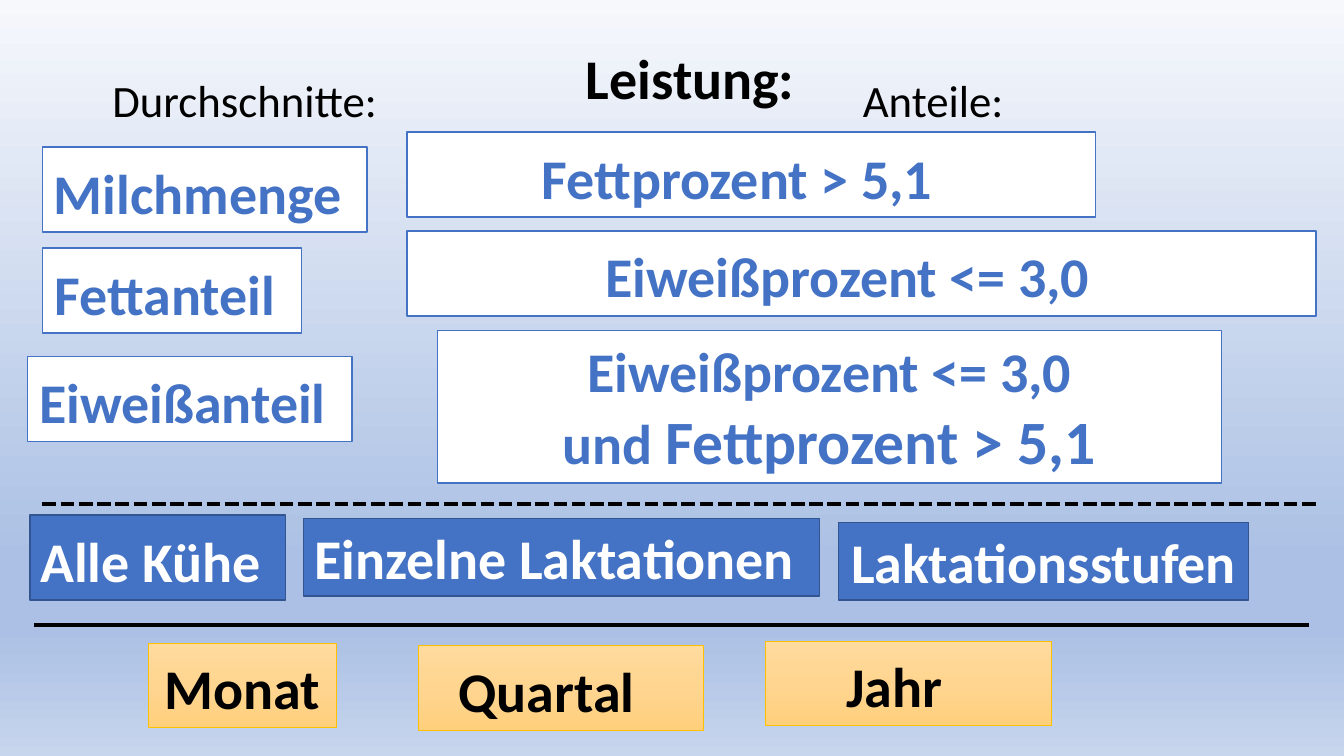
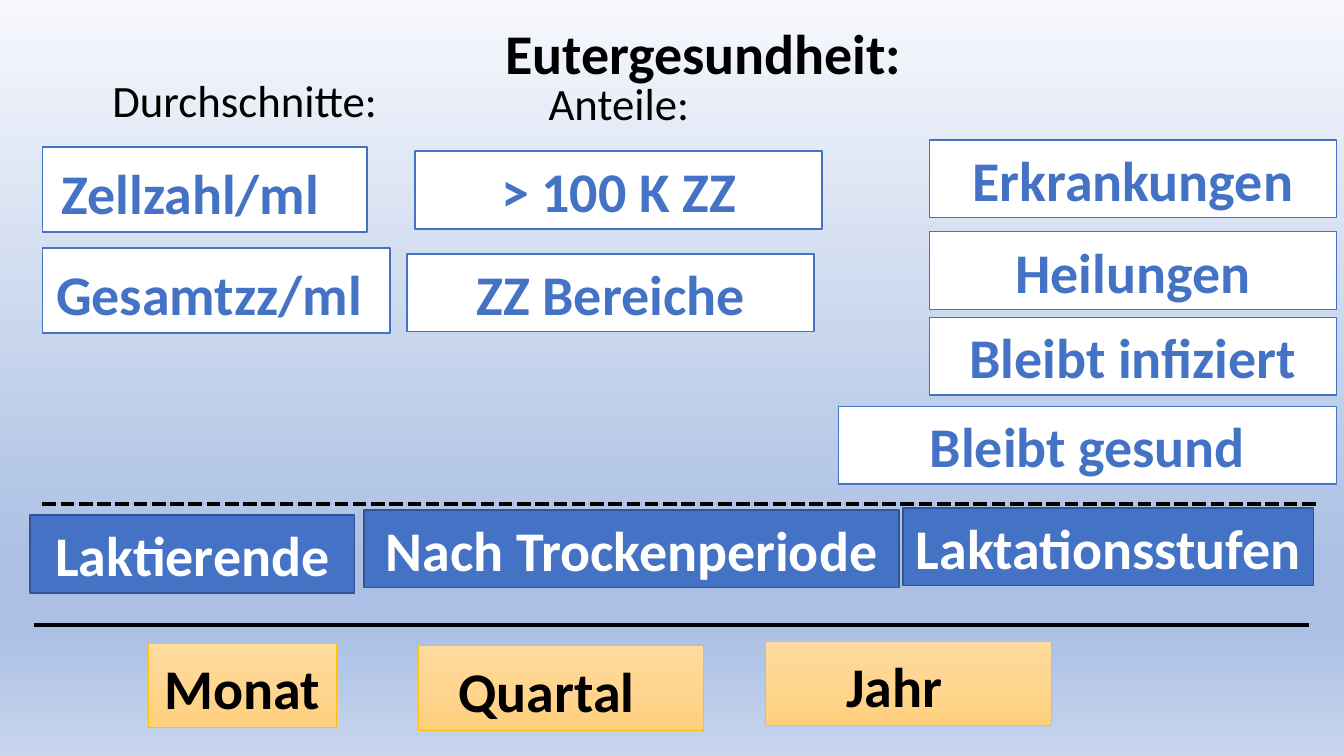
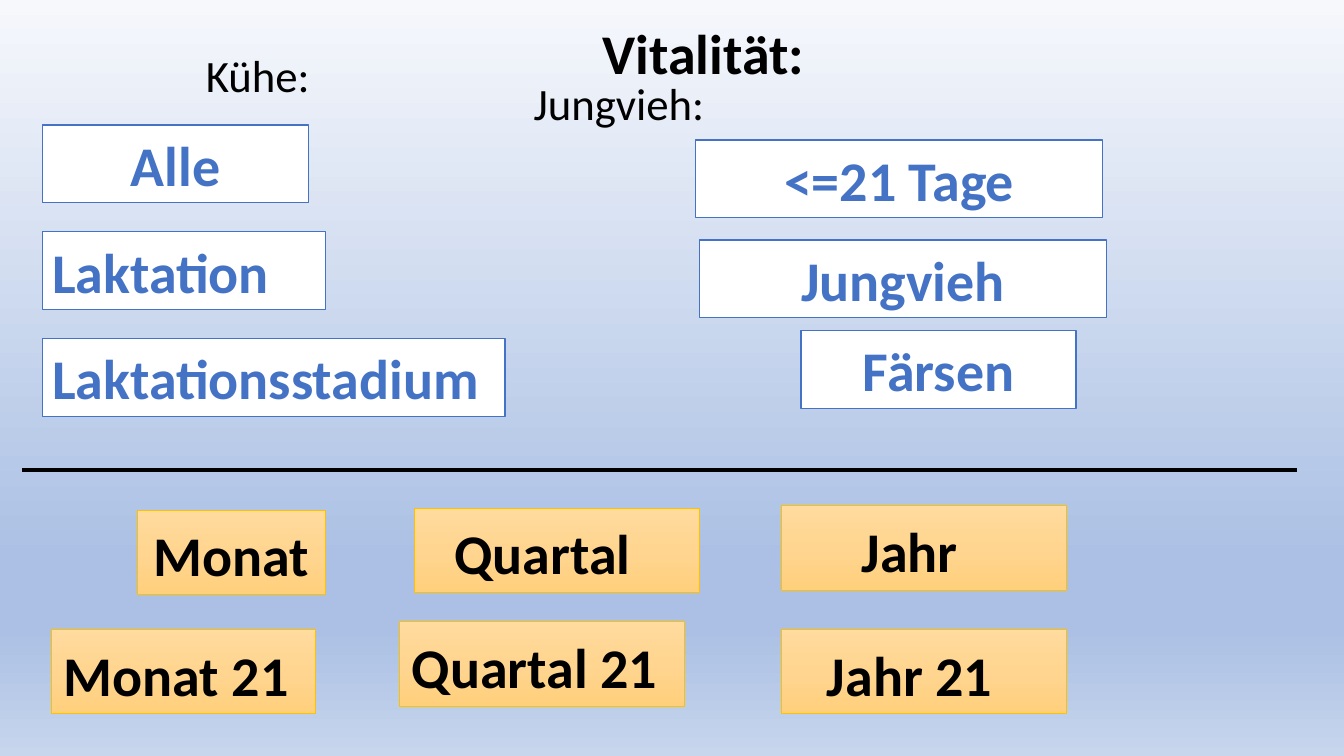
from dataclasses import dataclass

from lxml import etree
from pptx import Presentation
from pptx.dml.color import RGBColor
from pptx.enum import dml, shapes, text
from pptx.oxml.ns import qn
from pptx.util import Cm, Pt


@dataclass(frozen=True)
class Theme:
    font: str = "Calibri"
    ink: str = "000000"
    blue: str = "4472C4"
    navy: str = "325491"
    white: str = "FFFFFF"
    gold: str = "FFC000"
    sky: tuple = ((0, "F6F8FC"), (74, "ABC0E4"), (83, "ABC0E4"), (100, "C7D5ED"))
    sand: tuple = ((0, "FFDB9E"), (50, "FFD590"), (100, "FFD07C"))
    label: int = 32
    body: int = 40
    large: int = 44
    rule: float = 3.25


T = Theme()
LOW, TALL = 1.96, 2.14    # box heights
HALF, FULL = 0.18, 0.36   # shift of the text to the left

# Box kinds: fill, line colour, line width, text colour
WHITE = (T.white, T.blue, 1, T.blue)
BLUE = (T.blue, T.navy, 1, T.white)
GOLD = (T.sand, T.gold, 0.5, T.ink)


def put(obj, vals):
    for key, val in vals.items():
        setattr(obj, key, val)


def rgb(code):
    return RGBColor.from_string(code)


def shade(fill, root, stops):
    """Vertical gradient with any number of stops."""
    fill.gradient()
    fill.gradient_angle = 270
    row = root.find(".//" + qn("a:gradFill")).find(qn("a:gsLst"))
    for old in list(row):
        row.remove(old)
    for pos, code in stops:
        stop = etree.SubElement(row, qn("a:gs"), pos=str(pos * 1000))
        etree.SubElement(stop, qn("a:srgbClr"), val=code)


def write(shape, lines, color, bold=True, shift=0, left=False, drop=0):
    """Lines hold runs of (words, size)."""
    frame = shape.text_frame
    side = 0.25 if left else 0.05
    put(frame, {
        "word_wrap": True,
        "vertical_anchor": text.MSO_ANCHOR.MIDDLE,
        "margin_left": Cm(side),
        "margin_right": Cm(side + 2 * shift),
        "margin_top": Cm(0.13 + drop),
        "margin_bottom": Cm(0.13),
    })
    for num, line in enumerate(lines):
        para = frame.add_paragraph() if num else frame.paragraphs[0]
        para.alignment = text.PP_ALIGN.LEFT if left else text.PP_ALIGN.CENTER
        for words, size in line:
            run = para.add_run()
            run.text = words
            put(run.font, {"name": T.font, "size": Pt(size), "bold": bold})
            run.font.color.rgb = rgb(color)


def plain(slide, words, x, y, w, h, size, bold):
    area = slide.shapes.add_textbox(Cm(x), Cm(y), Cm(w), Cm(h))
    write(area, [[(words, size)]], T.ink, bold)


def title(slide, words, x=8.2, y=0.33):
    plain(slide, words, x, y, 19.05, LOW, T.body, True)


def label(slide, words, x, y, w=8.18):
    plain(slide, words, x, y, w, 1.63, T.label, False)


def box(slide, kind, words, x, y, w, h=LOW, shift=0, left=False):
    fill, edge, width, color = kind
    rect = slide.shapes.add_shape(
        shapes.MSO_SHAPE.RECTANGLE, Cm(x), Cm(y), Cm(w), Cm(h))
    rect.shadow.inherit = False
    if isinstance(fill, tuple):
        shade(rect.fill, rect.element, fill)
    else:
        rect.fill.solid()
        rect.fill.fore_color.rgb = rgb(fill)
    rect.line.color.rgb = rgb(edge)
    rect.line.width = Pt(width)
    lines = [[(words, T.body)]] if isinstance(words, str) else words
    write(rect, lines, color, shift=shift, left=left,
          drop=0.11 if h == TALL else 0)


def rule(slide, x, y, dash=False):
    line = slide.shapes.add_connector(
        shapes.MSO_CONNECTOR.STRAIGHT, Cm(x), Cm(y), Cm(x + 32.12), Cm(y))
    line.line.color.rgb = rgb(T.ink)
    line.line.width = Pt(T.rule)
    if dash:
        line.line.dash_style = dml.MSO_LINE.SQUARE_DOT
    etree.SubElement(line.element.spPr, qn("a:effectLst"))


def boxes(slide, kind, rows):
    for row in rows:
        box(slide, kind, *row)


def spans(slide, spots):
    """Month, quarter and year boxes."""
    names = (("Monat", 4.75, 0), ("Quartal", 7.19, FULL), ("Jahr", 7.19, FULL))
    for (name, w, shift), (x, y) in zip(names, spots):
        box(slide, GOLD, name, x, y, w, TALL, shift)


def frame(slide):
    """Rules and time spans of the figure slides."""
    rule(slide, 1.07, 12.7, dash=True)
    rule(slide, 0.86, 15.75)
    spans(slide, ((3.73, 16.2), (10.54, 16.26), (19.3, 16.15)))


def yields(slide):
    title(slide, "Leistung:", 7.87, 0.97)
    label(slide, "Durchschnitte:", 2.08, 1.7)
    label(slide, "Anteile:", 19.43, 1.7)
    frame(slide)
    both = [[("Eiweißprozent <= 3,0", T.body)],
            [("und ", T.body), ("Fettprozent > 5,1", T.large)]]
    boxes(slide, WHITE, (
        ("Milchmenge", 1.07, 3.71, 8.18, TALL, HALF),
        ("Fettanteil", 1.07, 6.25, 6.53, TALL, HALF),
        ("Eiweißanteil", 0.69, 8.99, 8.18, TALL, HALF),
        ("Fettprozent > 5,1", 10.26, 3.33, 17.35, TALL, FULL),
        ("Eiweißprozent <= 3,0", 10.26, 5.82, 22.91, TALL, FULL),
        (both, 11.02, 8.33, 19.76, 3.84),
    ))
    boxes(slide, BLUE, (
        ("Alle Kühe", 0.76, 12.98, 6.43, TALL, HALF),
        ("Einzelne Laktationen", 7.65, 13.06, 13, LOW, HALF),
        ("Laktationsstufen", 21.13, 13.16, 10.34),
    ))


def udder(slide):
    title(slide, "Eutergesundheit:")
    label(slide, "Durchschnitte:", 2.08, 1.7)
    label(slide, "Anteile:", 11.51, 1.78)
    frame(slide)
    boxes(slide, WHITE, (
        ("Zellzahl/ml", 1.07, 3.71, 8.18, TALL, FULL),
        ("Gesamtzz/ml", 1.07, 6.25, 8.76, TALL, HALF),
        ("> 100 K ZZ", 10.46, 3.81, 10.26),
        ("ZZ Bereiche", 10.26, 6.4, 10.26),
        ("Erkrankungen", 23.42, 3.53, 10.26),
        ("Heilungen", 23.42, 5.84, 10.26),
        ("Bleibt infiziert", 23.42, 8, 10.26),
        ("Bleibt gesund", 21.13, 10.24, 12.55),
    ))
    boxes(slide, BLUE, (
        ("Laktierende", 0.76, 12.98, 8.18),
        ("Nach Trockenperiode", 9.17, 12.85, 13.49),
        ("Laktationsstufen", 22.76, 12.8, 10.34),
    ))


def vital(slide):
    title(slide, "Vitalität:")
    label(slide, "Kühe:", 3.45, 1.07, 6.1)
    label(slide, "Jungvieh:", 11.51, 1.78)
    rule(slide, 0.56, 11.84)
    boxes(slide, WHITE, (
        ("Alle", 1.07, 3.15, 6.71),
        ("Laktation", 1.07, 5.84, 7.14, LOW, 0, True),
        ("Laktationsstadium", 1.07, 8.53, 11.66, LOW, 0, True),
        ("<=21 Tage", 17.53, 3.53, 10.26),
        ("Jungvieh", 17.63, 6.05, 10.26),
        ("Färsen", 20.19, 8.33, 6.93),
    ))
    spans(slide, ((3.45, 12.85), (10.44, 12.8), (19.69, 12.73)))
    boxes(slide, GOLD, (
        ("Monat 21", 1.3, 15.85, 6.65, TALL, HALF),
        ("Quartal 21", 10.06, 15.65, 7.19, TALL, HALF),
        ("Jahr 21", 19.69, 15.85, 7.19, TALL, FULL),
    ))


def main():
    deck = Presentation()
    put(deck, {"slide_width": Cm(33.87), "slide_height": Cm(19.05)})
    # Shared background
    base = deck.slide_master
    shade(base.background.fill, base.element, T.sky)
    for build in (yields, udder, vital):
        build(deck.slides.add_slide(deck.slide_layouts[6]))
    deck.save("out.pptx")


if __name__ == "__main__":
    main()
